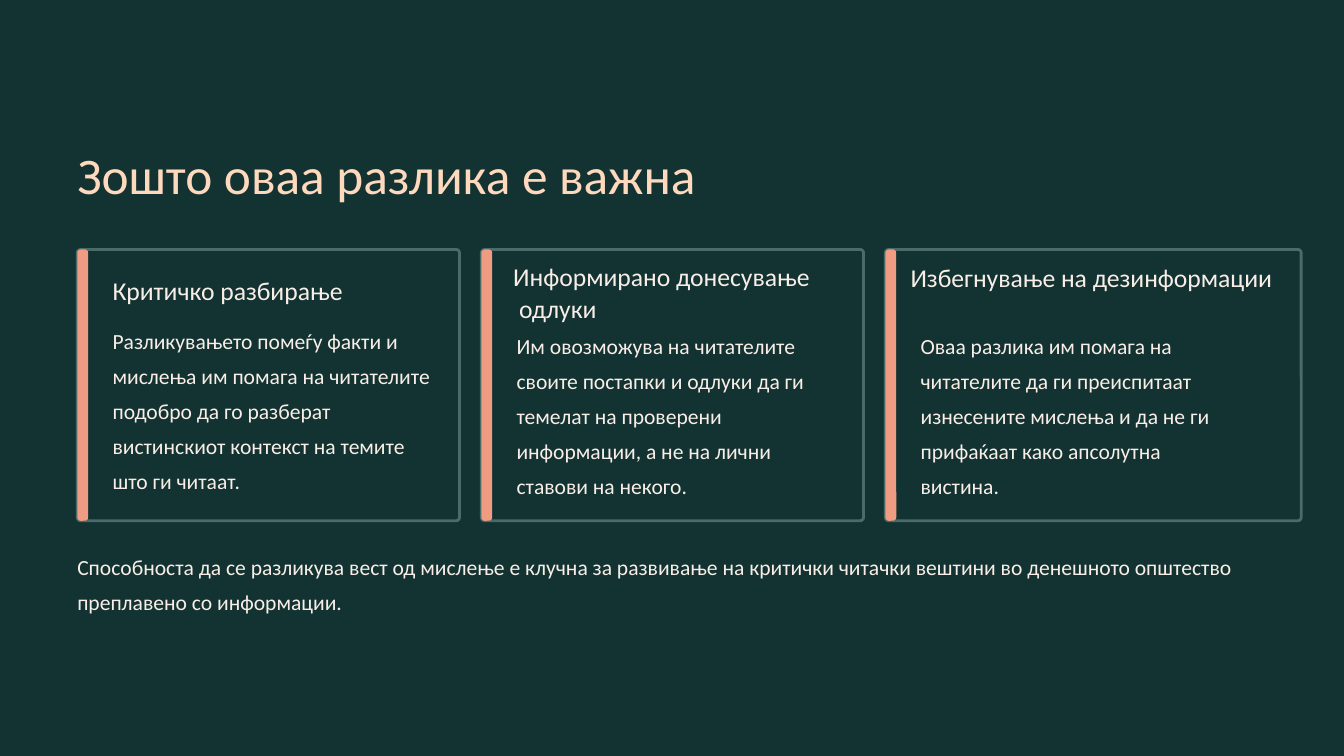
from pptx import Presentation
from pptx.dml.color import RGBColor
from pptx.enum.shapes import MSO_SHAPE as Shape
from pptx.enum.text import MSO_ANCHOR as Anchor, MSO_AUTO_SIZE as AutoSize, PP_ALIGN as Align
from pptx.util import Pt

DARK, EDGE, CORAL, PEACH, CREAM = "123332", "4A6B6A", "EF9C82", "FFD9BE", "F9EEE7"
LEFT, CARD_TOP, CARD_HEIGHT, CARD_PITCH, BAR_WIDTH = 66.24, 213.84, 232.56, 346.32, 9.36


def color(value):
    return RGBColor.from_string(value)


class SlideBuilder:
    """Draws styled elements on the current slide, with lengths in points."""

    font = "Calibri"

    def __init__(self, deck):
        self.slide = deck.slides.add_slide(deck.slide_layouts[5])
        backdrop = self.slide.background.fill
        backdrop.solid()
        backdrop.fore_color.rgb = color(DARK)

    def set_text(self, holder, lines, size, leading, ink, wrap, indents=()):
        frame = holder.text_frame
        frame.auto_size = AutoSize.NONE
        frame.word_wrap = wrap
        frame.vertical_anchor = Anchor.TOP
        frame.margin_left = frame.margin_right = frame.margin_top = frame.margin_bottom = 0
        for index, line in enumerate(lines):
            paragraph = frame.add_paragraph() if index else frame.paragraphs[0]
            paragraph.alignment = Align.LEFT
            paragraph.line_spacing = Pt(leading)
            if index < len(indents):
                properties = paragraph._p.get_or_add_pPr()
                properties.set("marL", str(Pt(indents[index])))
                properties.set("indent", "0")
            run = paragraph.add_run()
            run.text = line
            run.font.name = self.font
            run.font.size = Pt(size)
            run.font.bold = False
            run.font.color.rgb = color(ink)

    def title(self, text, left, top, width, height):
        heading = self.slide.shapes.title
        heading.left, heading.top = Pt(left), Pt(top)
        heading.width, heading.height = Pt(width), Pt(height)
        self.set_text(heading, [text], 44, 55, PEACH, False)

    def heading(self, lines, left, top, width):
        box = self.slide.shapes.add_textbox(Pt(left), Pt(top), Pt(width), Pt(27.36))
        self.set_text(box, lines, 22, 27.5, CREAM, False, (0, 5) if len(lines) > 1 else ())

    def body(self, text, left, top, width, height):
        box = self.slide.shapes.add_textbox(Pt(left), Pt(top), Pt(width), Pt(height))
        self.set_text(box, [text], 18.5, 30, CREAM, True)

    def panel(self, left, width, rounding, fill, edge=None):
        panel = self.slide.shapes.add_shape(
            Shape.ROUNDED_RECTANGLE, Pt(left), Pt(CARD_TOP), Pt(width), Pt(CARD_HEIGHT))
        panel.shadow.inherit = False
        panel.adjustments[0] = rounding
        panel.fill.solid()
        panel.fill.fore_color.rgb = color(fill)
        if edge:
            panel.line.color.rgb = color(edge)
            panel.line.width = Pt(2.4)
        else:
            panel.line.fill.background()

    def card(self, left, width, heading, heading_place, text, text_place):
        self.panel(left, width, 0.012, DARK, EDGE)
        self.panel(left, BAR_WIDTH, 0.295, CORAL)
        inset, top, heading_width = heading_place
        self.heading(heading, left + inset, top, heading_width)
        top, height = text_place
        self.body(text, left + 30.24, top, 275.04, height)


CARDS = [
    (327.6, ["Критичко разбирање"], (30.24, 234.72, 225.36),
     "Разликувањето помеѓу факти и мислења им помага на читателите подобро да го "
     "разберат вистинскиот контекст на темите што ги читаат.", (273.6, 150.48)),
    (327.6, ["Информирано донесување", "одлуки"], (27.36, 222.48, 272.16),
     "Им овозможува на читателите своите постапки и одлуки да ги темелат на проверени "
     "информации, а не на лични ставови на некого.", (277.2, 120.96)),
    (356.4, ["Избегнување на дезинформации"], (21.6, 223.2, 305.28),
     "Оваа разлика им помага на читателите да ги преиспитаат изнесените мислења и да "
     "не ги прифаќаат како апсолутна вистина.", (277.92, 120.96)),
]


def main():
    deck = Presentation()
    deck.slide_width, deck.slide_height = Pt(1152), Pt(648)
    builder = SlideBuilder(deck)
    builder.title("Зошто оваа разлика е важна", LEFT, 120.24, 655.92, 55.44)
    for column, card in enumerate(CARDS):
        builder.card(LEFT + column * CARD_PITCH, *card)
    builder.body("Способноста да се разликува вест од мислење е клучна за развивање на критички "
                 "читачки вештини во денешното општество преплавено со информации.",
                 LEFT, 467.28, 1020.24, 60.48)
    deck.save("out.pptx")


if __name__ == "__main__":
    main()
